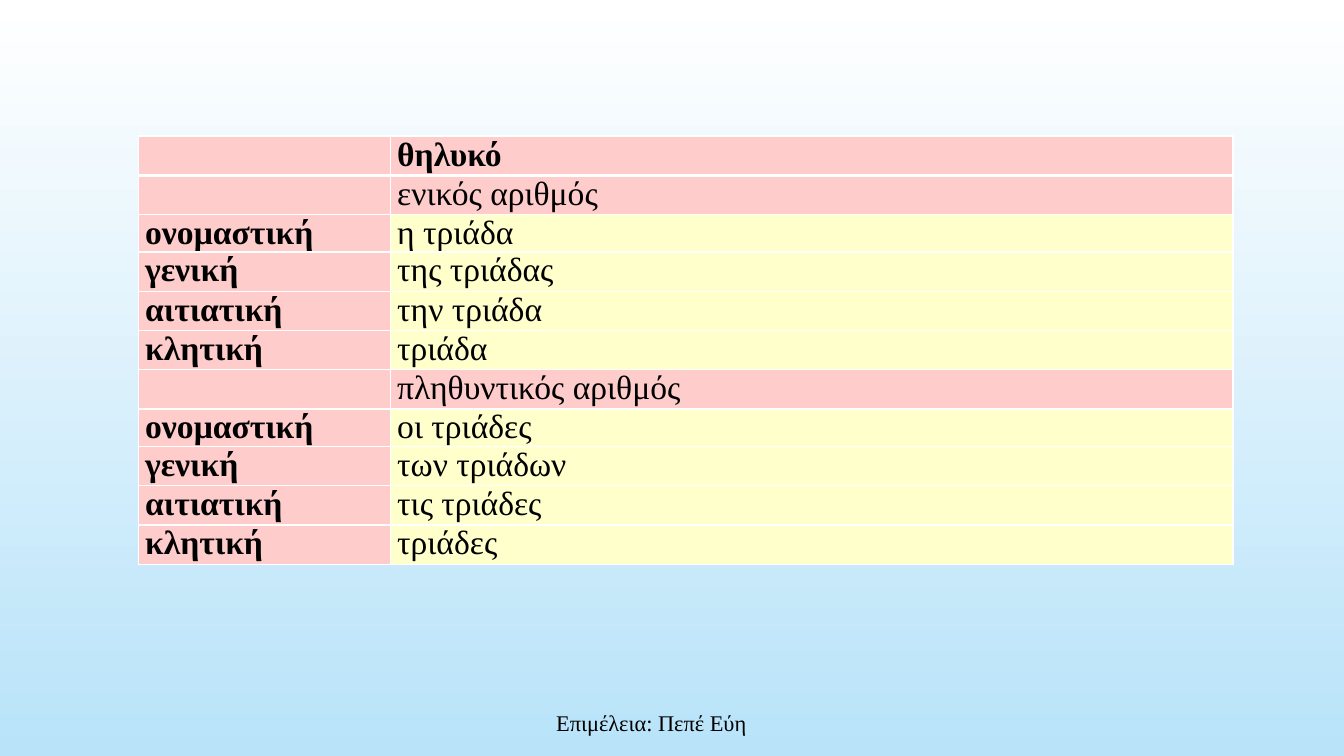
from dataclasses import dataclass

from lxml import etree
from pptx import Presentation
from pptx import util as u
from pptx.dml.color import RGBColor
from pptx.enum import text
from pptx.oxml import ns
from pptx.slide import Slide
from pptx.table import _Cell
from pptx.text.text import TextFrame

BLACK = RGBColor(0x00, 0x00, 0x00)
WHITE = RGBColor(0xFF, 0xFF, 0xFF)
SKY = RGBColor(0xB8, 0xE3, 0xF9)
PINK = RGBColor(0xFF, 0xCC, 0xCC)
CREAM = RGBColor(0xFF, 0xFF, 0xCC)
FONT = "Times New Roman"
COLUMN_WIDTHS = (2.5, 8.36)


@dataclass(frozen=True)
class Declension:
    case: str
    form: str
    height: float = 0.39


DECLENSIONS = (
    Declension("", "θηλυκό"),
    Declension("", "ενικός αριθμός"),
    Declension("ονομαστική", "η τριάδα", 0.37),
    Declension("γενική", "της τριάδας"),
    Declension("αιτιατική", "την τριάδα"),
    Declension("κλητική", "τριάδα"),
    Declension("", "πληθυντικός αριθμός"),
    Declension("ονομαστική", "οι τριάδες", 0.37),
    Declension("γενική", "των τριάδων"),
    Declension("αιτιατική", "τις τριάδες"),
    Declension("κλητική", "τριάδες"),
)


def write(frame: TextFrame, content: str, *, size: int, bold: bool = False,
          align: text.PP_ALIGN = text.PP_ALIGN.LEFT) -> None:
    paragraph = frame.paragraphs[0]
    paragraph.alignment = align
    if not content:
        return
    run = paragraph.add_run()
    run.text = content
    run.font.name = FONT
    run.font.size = u.Pt(size)
    run.font.bold = bold
    run.font.color.rgb = BLACK


def add_border(cell: _Cell, side: str, points: int) -> None:
    properties = cell._tc.get_or_add_tcPr()
    line = etree.SubElement(properties, ns.qn(f"a:ln{side}"), w=str(u.Pt(points)))
    fill = etree.SubElement(line, ns.qn("a:solidFill"))
    etree.SubElement(fill, ns.qn("a:srgbClr"), val=str(WHITE))


def format_cell(cell: _Cell, content: str, *, fill: RGBColor, bold: bool,
                top: int, bottom: int) -> None:
    for side, points in (("L", 1), ("R", 1), ("T", top), ("B", bottom)):
        add_border(cell, side, points)
    cell.fill.solid()
    cell.fill.fore_color.rgb = fill
    cell.margin_left = cell.margin_right = u.Inches(0.07)
    cell.margin_top = cell.margin_bottom = 0
    write(cell.text_frame, content, size=24, bold=bold)


def paint_background(slide: Slide) -> None:
    fill = slide.background.fill
    fill.gradient()
    fill.gradient_angle = 270
    for stop, position, color in zip(fill.gradient_stops, (0, 1), (WHITE, SKY)):
        stop.position = position
        stop.color.rgb = color


def add_declensions(slide: Slide) -> None:
    table = slide.shapes.add_table(
        len(DECLENSIONS), len(COLUMN_WIDTHS), u.Inches(1.37), u.Inches(1.35),
        u.Inches(sum(COLUMN_WIDTHS)),
        u.Inches(sum(row.height for row in DECLENSIONS))).table
    table.horz_banding = False
    for column, width in zip(table.columns, COLUMN_WIDTHS):
        column.width = u.Inches(width)
    for index, declension in enumerate(DECLENSIONS):
        row = table.rows[index]
        row.height = u.Inches(declension.height)
        top = 3 if index == 1 else 1
        bottom = 3 if index == 0 else 1
        case, form = row.cells
        format_cell(case, declension.case, fill=PINK, bold=True,
                    top=top, bottom=bottom)
        format_cell(form, declension.form, fill=CREAM if declension.case else PINK,
                    bold=index == 0, top=top, bottom=bottom)


def add_credit(slide: Slide) -> None:
    credit = slide.shapes.add_textbox(
        u.Inches(2.81), u.Inches(6.97), u.Inches(7.3), u.Inches(0.4)).text_frame
    credit.word_wrap = True
    credit.vertical_anchor = text.MSO_ANCHOR.MIDDLE
    write(credit, "Επιμέλεια: Πεπέ Εύη", size=16, align=text.PP_ALIGN.CENTER)


def main() -> None:
    deck = Presentation()
    deck.slide_width = u.Inches(13.33)
    deck.slide_height = u.Inches(7.5)
    slide = deck.slides.add_slide(deck.slide_layouts[6])
    paint_background(slide)
    add_declensions(slide)
    add_credit(slide)
    deck.save("out.pptx")


if __name__ == "__main__":
    main()
